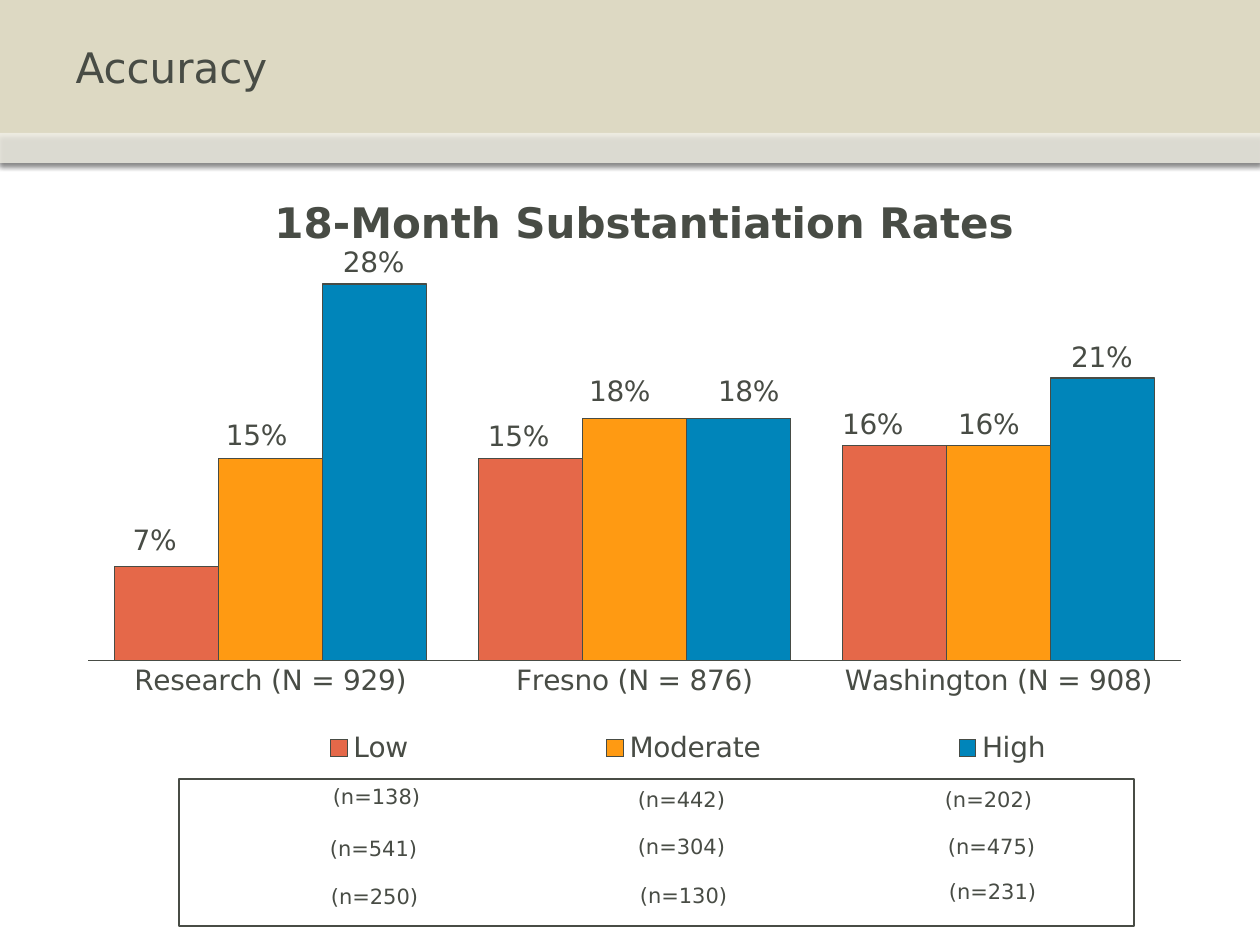
from lxml import etree
from pptx import Presentation, util as u
from pptx.chart.data import CategoryChartData
from pptx.dml.color import RGBColor
from pptx.enum import chart as ch, shapes, text
from pptx.oxml import parse_xml
from pptx.oxml.ns import nsdecls, qn

INK = RGBColor(0x48, 0x4C, 0x45)
SAND = RGBColor(0xDD, 0xD9, 0xC3)
WHITE = RGBColor(0xFF, 0xFF, 0xFF)
FONT = "DejaVu Sans"

SITES = ["Research (N = 929)", "Fresno (N = 876)", "Washington (N = 908)"]
# Risk level, colour, rates, and the shift of each label from its bar in px
LEVELS = [
    ("Low", RGBColor(0xE5, 0x68, 0x49), (0.07, 0.15, 0.16),
     ((-12, -4), (-12, -1), (-22, 1))),
    ("Moderate", RGBColor(0xFF, 0x9A, 0x12), (0.15, 0.18, 0.16),
     ((-14, -2), (-15, -5), (-10, 1))),
    ("High", RGBColor(0x00, 0x85, 0xBA), (0.28, 0.18, 0.21),
     ((-1, 0), (10, -5), (-1, 1))),
]
# Sample sizes by risk level, with the place of each inside the frame
COUNTS = [
    (138, 130, -2), (541, 127, 50), (250, 128, 98),
    (442, 435, 1), (304, 435, 48), (130, 437, 97),
    (202, 742, 1), (475, 745, 48), (231, 746, 93),
]


def px(n):
    return u.Emu(round(n * 914400 / 126))


def style(font, size, bold=False):
    font.name, font.size, font.bold = FONT, u.Pt(size), bold
    font.color.rgb = INK


def outline(line):
    line.color.rgb, line.width = INK, u.Pt(0.75)


def place(node, index, **parts):
    """Give a chart part a manual layout, as fractions of the chart."""
    for old in node.findall(qn("c:layout")):
        node.remove(old)
    layout = etree.Element(qn("c:layout"))
    manual = etree.SubElement(layout, qn("c:manualLayout"))
    for tag, value in parts.items():
        etree.SubElement(manual, qn("c:" + tag)).set("val", str(value))
    node.insert(index, layout)


def add_band(slide, box, fill, alpha=100):
    band = slide.shapes.add_shape(shapes.MSO_SHAPE.RECTANGLE, *map(px, box))
    band.fill.solid()
    band.fill.fore_color.rgb = fill
    band.line.fill.background()
    color = band._element.spPr.find(".//" + qn("a:srgbClr"))
    etree.SubElement(color, qn("a:alpha")).set("val", str(alpha * 1000))
    band._element.spPr.append(parse_xml(
        f'<a:effectLst {nsdecls("a")}><a:outerShdw blurRad="{u.Pt(3.1)}" '
        f'dist="{u.Pt(1.8)}" dir="5400000" rotWithShape="0">'
        '<a:srgbClr val="000000"><a:alpha val="35000"/></a:srgbClr>'
        '</a:outerShdw></a:effectLst>'))


def add_header(slide, left, top, width, height):
    strip = 30
    add_band(slide, (left, top, width, height), SAND)
    add_band(slide, (left, top + height - strip, width, strip), WHITE, 53)
    title = slide.shapes.title
    title.left, title.top = px(left + 63), px(top)
    title.width, title.height = px(width - 126), px(height - strip)
    slide.shapes._spTree.append(title._element)  # in front of the bands
    frame = title.text_frame
    frame.text = "Accuracy"
    frame.vertical_anchor = text.MSO_ANCHOR.MIDDLE
    para = frame.paragraphs[0]
    para.alignment = text.PP_ALIGN.LEFT
    style(para.font, 24)


def add_rates(slide, left, top, width, height):
    data = CategoryChartData(number_format="0%")
    data.categories = SITES
    for name, _, rates, _ in LEVELS:
        data.add_series(name, rates)
    chart = slide.shapes.add_chart(
        ch.XL_CHART_TYPE.COLUMN_CLUSTERED,
        *map(px, (left, top, width, height)), data).chart
    style(chart.font, 10)

    head = chart.chart_title
    head.text_frame.text = "18-Month Substantiation Rates"
    style(head.text_frame.paragraphs[0].font, 24, True)
    head.include_in_layout = False
    place(head._element, 1, xMode="edge", yMode="edge", x=0.21, y=0.04)

    cats, vals = chart.category_axis, chart.value_axis
    style(cats.tick_labels.font, 16)
    outline(cats.format.line)
    cats.major_tick_mark = ch.XL_TICK_MARK.NONE
    vals.minimum_scale, vals.maximum_scale, vals.major_unit = 0, 0.3, 0.1
    vals.has_major_gridlines = False
    vals.visible = False

    chart.has_legend = True
    legend = chart.legend
    legend.position = ch.XL_LEGEND_POSITION.BOTTOM
    legend.include_in_layout = False
    style(legend.font, 16)
    place(legend._element, 1, xMode="edge", yMode="edge",
          x=0.11, y=0.76, w=0.87, h=0.06)

    plot = chart.plots[0]
    plot.gap_width, plot.overlap, plot.vary_by_categories = 50, 0, False
    area = chart._chartSpace.chart.plotArea
    place(area, 0, layoutTarget="inner", xMode="edge", yMode="edge",
          x=0.068, y=0.134, w=0.869, h=0.539)
    for series, (_, color, _, shifts) in zip(plot.series, LEVELS):
        series.format.fill.solid()
        series.format.fill.fore_color.rgb = color
        outline(series.format.line)
        labels = series.data_labels
        labels.show_value = True
        labels.number_format, labels.number_format_is_linked = "0%", False
        style(labels.font, 16)
        for i, (dx, dy) in enumerate(shifts):
            label = series.points[i].data_label
            style(label.font, 16)
            label.position = ch.XL_LABEL_POSITION.OUTSIDE_END
            node = series._element.findall(".//" + qn("c:dLbl"))[i]
            place(node, 1, x=round(dx / width, 4), y=round(dy / height, 4))


def add_counts(slide, left, top, width, height):
    group = slide.shapes.add_group_shape().shapes
    for count, x, y in COUNTS:
        frame = group.add_textbox(
            *map(px, (left + x, top + y, 135, 38))).text_frame
        frame.word_wrap = True
        frame.vertical_anchor = text.MSO_ANCHOR.MIDDLE
        frame.text = f"(n={count})"
        para = frame.paragraphs[0]
        para.alignment = text.PP_ALIGN.CENTER
        style(para.font, 12)
    border = group.add_shape(
        shapes.MSO_SHAPE.RECTANGLE, *map(px, (left, top, width, height)))
    border.fill.background()
    border.shadow.inherit = False
    outline(border.line)


def main():
    deck = Presentation()
    deck.slide_width, deck.slide_height = px(1260), px(945)
    slide = deck.slides.add_slide(deck.slide_layouts[5])
    add_header(slide, 0, 0, 1260, 163)
    add_rates(slide, 3, 157, 1257, 748)
    add_counts(slide, 179, 779, 955, 147)
    deck.save("out.pptx")


if __name__ == "__main__":
    main()
